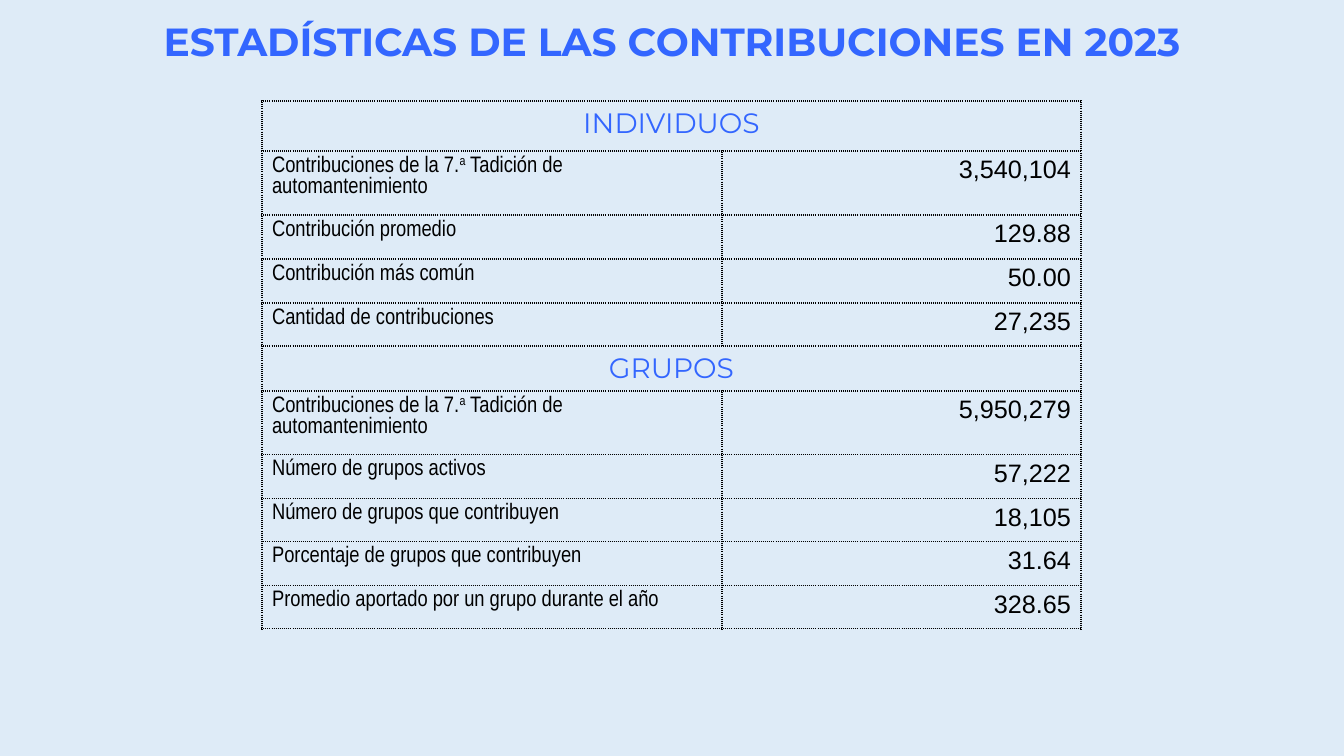
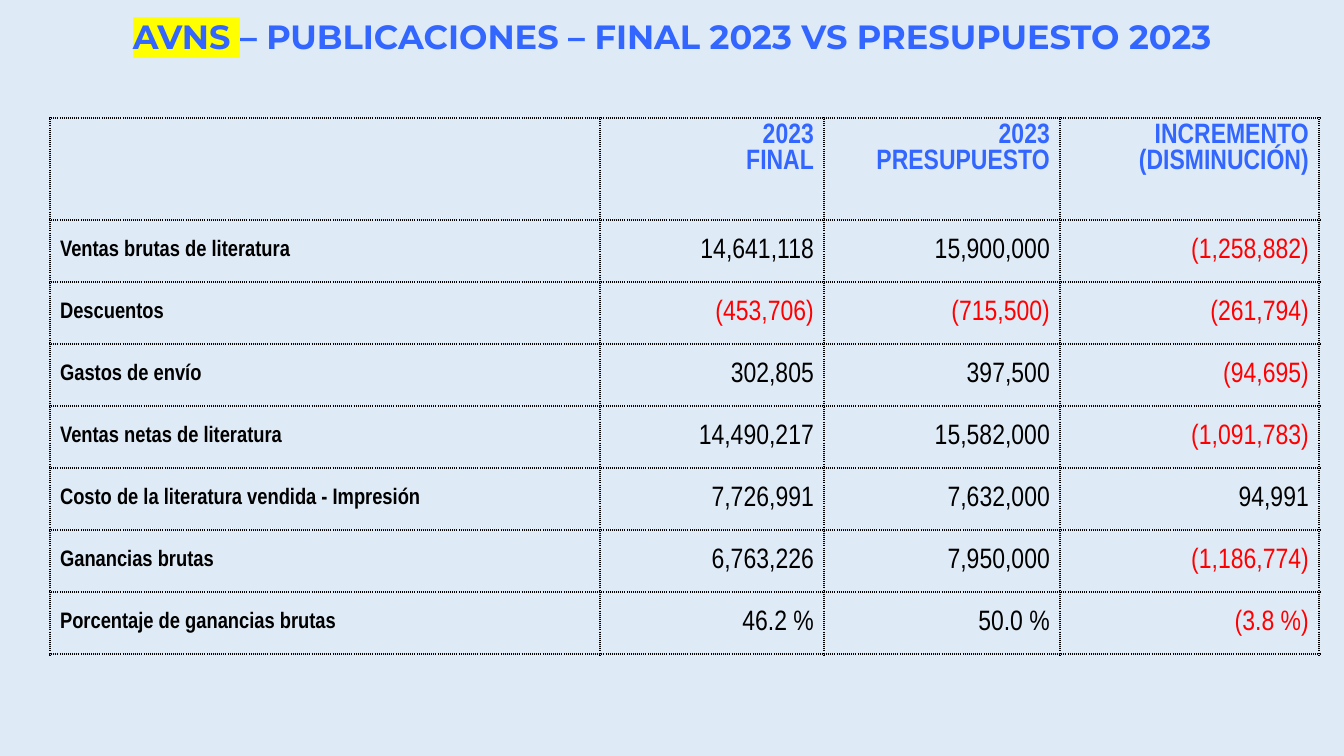
from lxml.etree import SubElement
from pptx import Presentation
from pptx.dml.color import RGBColor
from pptx.enum.text import MSO_ANCHOR, PP_ALIGN
from pptx.oxml import parse_xml
from pptx.oxml.ns import nsdecls, qn
from pptx.util import Pt

PX = 914400 / 100.8
SKY = RGBColor(0xDE, 0xEB, 0xF7)
BLUE = RGBColor(0x33, 0x66, 0xFF)
BLACK = RGBColor(0, 0, 0)
RED = RGBColor(0xFF, 0, 0)
YELLOW = RGBColor(0xFF, 0xFF, 0)
HEAD, BODY, SLIM = "Montserrat", "Arial", "Arial Narrow"
LEFT, MID, RIGHT = PP_ALIGN.LEFT, PP_ALIGN.CENTER, PP_ALIGN.RIGHT


def write(frame, text, size, face, color, align, bold=False):
    """Fill a frame: newlines part paragraphs, bars part runs. Return the runs."""
    runs = []
    for i, line in enumerate(text.split("\n")):
        para = frame.add_paragraph() if i else frame.paragraphs[0]
        para.alignment = align
        font = para.font
        font.size, font.name, font.bold = Pt(size), face, bold
        font.color.rgb = color
        for part in line.split("|"):
            run = para.add_run()
            run.text = part
            runs.append(run)
    return runs


def grid(page, left, top, wide, high):
    """Add a table with dotted borders, given its column widths and row heights."""
    box = [int(n * PX) for n in (left, top, sum(wide), sum(high))]
    table = page.shapes.add_table(len(high), len(wide), *box).table
    table.first_row = table.horz_banding = False
    for col, size in zip(table.columns, wide):
        col.width = int(size * PX)
    for row, size in zip(table.rows, high):
        row.height = int(size * PX)
    for cell in table.iter_cells():
        props = cell._tc.get_or_add_tcPr()
        for side in "LRTB":
            props.append(parse_xml(
                f'<a:ln{side} {nsdecls("a")} w="{Pt(1.5)}"><a:solidFill>'
                f'<a:srgbClr val="{BLACK}"/></a:solidFill>'
                f'<a:prstDash val="sysDot"/></a:ln{side}>'))
        cell.fill.solid()
        cell.fill.fore_color.rgb = SKY
    return table


deck = Presentation()
deck.slide_width, deck.slide_height = int(1344 * PX), int(756 * PX)
back = deck.slide_master.background.fill
back.solid()
back.fore_color.rgb = SKY

# Titles: text, size, top, height
titles = [
    ("ESTADÍSTICAS DE LAS CONTRIBUCIONES EN 2023", 28, 0, 82),
    ("AVNS |– PUBLICACIONES – FINAL 2023 VS PRESUPUESTO 2023", 24, 10, 52),
]
pages = []
for text, size, top, high in titles:
    page = deck.slides.add_slide(deck.slide_layouts[6])
    box = page.shapes.add_textbox(0, int(top * PX), deck.slide_width, int(high * PX))
    frame = box.text_frame
    frame.word_wrap = True
    frame.vertical_anchor = MSO_ANCHOR.MIDDLE
    runs = write(frame, text, size, HEAD, BLUE, MID, True)
    if len(runs) > 1:
        mark = SubElement(runs[0]._r.get_or_add_rPr(), qn("a:highlight"))
        SubElement(mark, qn("a:srgbClr")).set("val", str(YELLOW))
    pages.append(page)

# Contributions
SELF = "Contribuciones de la 7.|a| Tadición de automantenimiento"
gifts = [
    ("INDIVIDUOS", ""),
    (SELF, "3,540,104"),
    ("Contribución promedio", "129.88"),
    ("Contribución más común", "50.00"),
    ("Cantidad de contribuciones", "27,235"),
    ("GRUPOS", ""),
    (SELF, "5,950,279"),
    ("Número de grupos activos", "57,222"),
    ("Número de grupos que contribuyen", "18,105"),
    ("Porcentaje de grupos que contribuyen", "31.64"),
    ("Promedio aportado por un grupo durante el año", "328.65"),
]
high = [50, 52, 44, 44, 43, 45, 52, 44, 43, 44, 43]
table = grid(pages[0], 262, 101, [460, 359], high)
for r, (label, value) in enumerate(gifts):
    name, sum_cell = table.cell(r, 0), table.cell(r, 1)
    if not value:
        name.merge(sum_cell)
        write(name.text_frame, label, 20, HEAD, BLUE, MID)
        continue
    runs = write(name.text_frame, label, 16, SLIM, BLACK, LEFT)
    if len(runs) > 1:
        runs[1]._r.get_or_add_rPr().set("baseline", "30000")
    write(sum_cell.text_frame, value, 18, BODY, BLACK, RIGHT)

# Publications
heads = ["2023\nFINAL", "2023\nPRESUPUESTO", "INCREMENTO\n(DISMINUCIÓN)"]
sales = [
    ("Ventas brutas de literatura", "14,641,118", "15,900,000", "(1,258,882)"),
    ("Descuentos", "(453,706)", "(715,500)", "(261,794)"),
    ("Gastos de envío", "302,805", "397,500", "(94,695)"),
    ("Ventas netas de literatura", "14,490,217", "15,582,000", "(1,091,783)"),
    ("Costo de la literatura vendida - Impresión", "7,726,991", "7,632,000", "94,991"),
    ("Ganancias brutas", "6,763,226", "7,950,000", "(1,186,774)"),
    ("Porcentaje de ganancias brutas", "46.2 %", "50.0 %", "(3.8 %)"),
]
table = grid(pages[1], 50, 118, [550, 224, 236, 259], [102] + [62] * len(sales))
for c, head in enumerate(heads, 1):
    write(table.cell(0, c).text_frame, head, 20, SLIM, BLUE, RIGHT, True)
for r, (label, *values) in enumerate(sales, 1):
    write(table.cell(r, 0).text_frame, label, 16, SLIM, BLACK, LEFT, True)
    for c, value in enumerate(values, 1):
        color = RED if value.startswith("(") else BLACK
        write(table.cell(r, c).text_frame, value, 20, SLIM, color, RIGHT)
    for cell in table.rows[r].cells:
        cell.vertical_anchor = MSO_ANCHOR.MIDDLE

deck.save("out.pptx")
